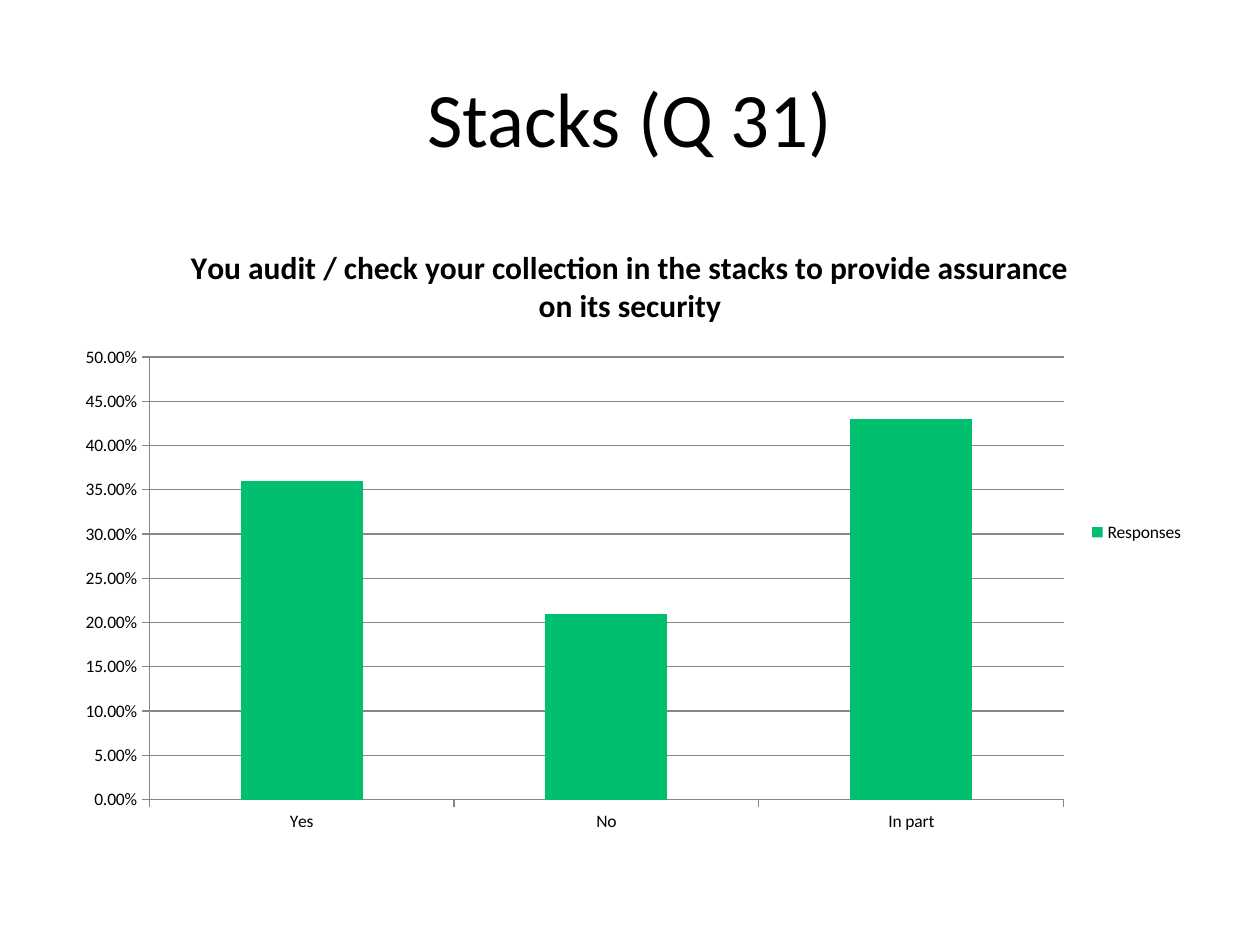
from pptx import Presentation
from pptx.chart.data import CategoryChartData as Data
from pptx.dml.color import RGBColor
from pptx.enum.chart import XL_CHART_TYPE as Kind, XL_LEGEND_POSITION as Side, XL_TICK_MARK as Tick
from pptx.enum.text import MSO_ANCHOR as Anchor, PP_ALIGN as Align
from pptx.util import Pt

BLACK = RGBColor(0x00, 0x00, 0x00)
GREEN = RGBColor(0x00, 0xBF, 0x6F)
GRAY = RGBColor(0x87, 0x87, 0x87)


class Deck:
    face = "Calibri"
    ink = BLACK

    def __init__(self, wide, high):
        self.show = Presentation()
        self.show.slide_width, self.show.slide_height = Pt(wide), Pt(high)
        self.page = self.show.slides.add_slide(self.show.slide_layouts[6])

    def style(self, font, size, bold=False):
        font.name = self.face
        font.size = Pt(size)
        font.bold = bold
        font.color.rgb = self.ink

    def text(self, words, box, size):
        frame = self.page.shapes.add_textbox(*map(Pt, box)).text_frame
        frame.word_wrap = True
        frame.vertical_anchor = Anchor.MIDDLE
        line = frame.paragraphs[0]
        line.alignment = Align.CENTER
        run = line.add_run()
        run.text = words
        self.style(run.font, size)

    def bars(self, title, name, rows, box):
        data = Data(number_format="0.00%")
        data.categories = list(rows)
        data.add_series(name, list(rows.values()))
        chart = self.page.shapes.add_chart(Kind.COLUMN_CLUSTERED, *map(Pt, box), data).chart
        self.style(chart.font, 10)

        chart.has_title = True
        run = chart.chart_title.text_frame.paragraphs[0].add_run()
        run.text = title
        self.style(run.font, 18, True)
        chart.chart_title.include_in_layout = False

        chart.has_legend = True
        chart.legend.position = Side.RIGHT
        chart.legend.include_in_layout = False

        plot = chart.plots[0]
        plot.gap_width = 150
        plot.vary_by_categories = False
        fill = plot.series[0].format.fill
        fill.solid()
        fill.fore_color.rgb = GREEN

        for axis in (chart.category_axis, chart.value_axis):
            axis.major_tick_mark = Tick.OUTSIDE
            axis.minor_tick_mark = Tick.NONE
            self.rule(axis.format.line)
        scale = chart.value_axis
        scale.minimum_scale, scale.maximum_scale, scale.major_unit = 0, 0.5, 0.05
        scale.tick_labels.number_format = "0.00%"
        scale.tick_labels.number_format_is_linked = False
        scale.has_major_gridlines = True
        self.rule(scale.major_gridlines.format.line)

    def rule(self, line):
        line.color.rgb = GRAY
        line.width = Pt(0.75)

    def save(self):
        self.show.save("out.pptx")


def main():
    deck = Deck(720, 540)
    deck.text("Stacks (Q 31)", (36, 21.6, 648, 90), 44)
    deck.bars(
        "You audit / check your collection in the stacks to provide assurance on its security",
        "Responses",
        {"Yes": 0.36, "No": 0.21, "In part": 0.43},
        (36, 126, 648, 356.4),
    )
    deck.save()


if __name__ == "__main__":
    main()
